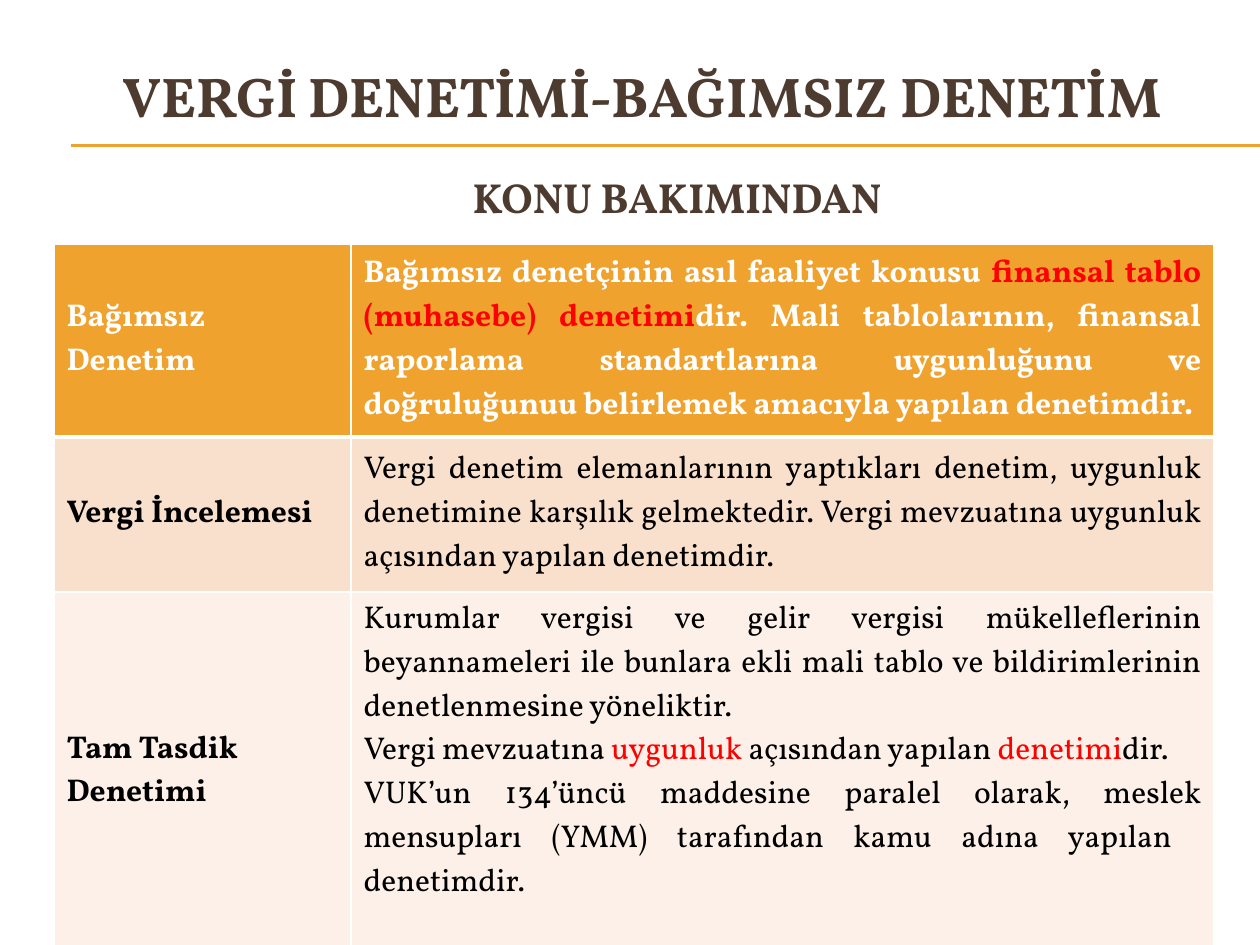
from lxml.etree import SubElement
from pptx import Presentation
from pptx.dml.color import RGBColor
from pptx.enum.shapes import MSO_CONNECTOR
from pptx.enum.text import MSO_ANCHOR as Anchor, PP_ALIGN as Align
from pptx.oxml.ns import qn
from pptx.util import Emu, Pt

FONT = "Vollkorn"
BROWN, ORANGE, RED = "4E3B30", "F0A22E", "FF0000"
WHITE, BLACK = "FFFFFF", "000000"

COLUMN_WIDTHS = [297, 863]
ROW_HEIGHTS = [193, 155, 360]
# Each row: fill, text colour, label, then paragraphs of (text, is highlighted)
ROWS = [
    (ORANGE, WHITE, "Bağımsız Denetim", [
        [("Bağımsız denetçinin asıl faaliyet konusu ", False),
         ("finansal tablo (muhasebe) denetimi", True),
         ("dir. Mali tablolarının, finansal raporlama standartlarına uygunluğunu "
          "ve doğruluğunuu belirlemek amacıyla yapılan denetimdir. ", False)],
    ]),
    ("F9E0CD", BLACK, "Vergi İncelemesi", [
        [("Vergi denetim elemanlarının yaptıkları denetim, uygunluk denetimine "
          "karşılık gelmektedir. Vergi mevzuatına uygunluk açısından yapılan "
          "denetimdir.", False)],
    ]),
    ("FCF0E8", BLACK, "Tam Tasdik Denetimi", [
        [("Kurumlar vergisi ve gelir vergisi mükelleflerinin beyannameleri ile "
          "bunlara ekli mali tablo ve bildirimlerinin denetlenmesine "
          "yöneliktir. ", False)],
        [("Vergi mevzuatına ", False), ("uygunluk", True),
         (" açısından yapılan ", False), ("denetimi", True), ("dir.", False)],
        [("VUK’un 134’üncü maddesine paralel olarak, meslek mensupları (YMM) "
          "tarafından kamu adına yapılan  denetimdir.", False)],
    ]),
]


def px(length):
    return Emu(length * 914400 // 126)


def color(value):
    return RGBColor.from_string(value)


def style(font, size, value, bold):
    font.name, font.size, font.bold = FONT, Pt(size), bold
    font.color.rgb = color(value)


def add_heading(slide, box, text, size, anchor, indent=0):
    frame = slide.shapes.add_textbox(*map(px, box)).text_frame
    frame.word_wrap = True
    frame.vertical_anchor = anchor
    paragraph = frame.paragraphs[0]
    paragraph.text = text
    paragraph.alignment = Align.CENTER
    style(paragraph.font, size, BROWN, True)
    if indent:
        paragraph._p.get_or_add_pPr().set("indent", str(px(indent)))


def add_rules(slide, box):
    left, top, width, height = box
    for y in (top, top + height):
        line = slide.shapes.add_connector(
            MSO_CONNECTOR.STRAIGHT, px(left), px(y), px(left + width), px(y))
        line.line.color.rgb = color(ORANGE)
        line.line.width = Pt(0.75)
        SubElement(line._element.spPr, qn("a:effectLst"))


def set_borders(cell, widths):
    properties = cell._tc.get_or_add_tcPr()
    for index, (side, width) in enumerate(widths.items()):
        border = properties.makeelement(qn(f"a:ln{side}"), {"w": str(Pt(width))})
        fill = SubElement(border, qn("a:solidFill"))
        SubElement(fill, qn("a:srgbClr"), val=WHITE)
        properties.insert(index, border)


def fill_cell(cell, paragraphs, value, bold, alignment):
    frame = cell.text_frame
    for index, runs in enumerate(paragraphs):
        paragraph = frame.add_paragraph() if index else frame.paragraphs[0]
        paragraph.alignment = alignment
        style(paragraph.font, 18, value, bold)
        for text, highlighted in runs:
            run = paragraph.add_run()
            run.text = text
            style(run.font, 18, RED if highlighted else value, bold)


def add_comparison_table(slide, box):
    table = slide.shapes.add_table(
        len(ROWS), len(COLUMN_WIDTHS), *map(px, box)).table
    for column, width in zip(table.columns, COLUMN_WIDTHS):
        column.width = px(width)
    for index, (fill, value, label, paragraphs) in enumerate(ROWS):
        table.rows[index].height = px(ROW_HEIGHTS[index])
        label_cell, detail_cell = table.rows[index].cells
        fill_cell(label_cell, [[(label, False)]], value, True, Align.LEFT)
        fill_cell(detail_cell, paragraphs, value, index == 0, Align.JUSTIFY)
        label_cell.vertical_anchor = Anchor.MIDDLE
        # The last row is taller than its text, which starts at the top
        last = index == len(ROWS) - 1
        detail_cell.vertical_anchor = Anchor.TOP if last else Anchor.MIDDLE
        for cell in (label_cell, detail_cell):
            cell.fill.solid()
            cell.fill.fore_color.rgb = color(fill)
            set_borders(cell, {"L": 1, "R": 1, "T": 3 if index == 1 else 1,
                               "B": 3 if index == 0 else 1})


def main():
    presentation = Presentation()
    presentation.slide_width, presentation.slide_height = px(1260), px(945)
    slide = presentation.slides.add_slide(presentation.slide_layouts[6])

    # Title and double rule
    add_rules(slide, (71, 145, 1189, 1))
    add_heading(slide, (44, 37, 1197, 116), "VERGİ DENETİMİ-BAĞIMSIZ DENETİM",
                32, Anchor.MIDDLE)
    # Subtitle
    add_heading(slide, (42, 165, 1197, 673), "KONU BAKIMINDAN",
                24, Anchor.TOP, indent=73)
    # Table
    add_comparison_table(
        slide, (54, 244, sum(COLUMN_WIDTHS), sum(ROW_HEIGHTS)))
    presentation.save("out.pptx")


if __name__ == "__main__":
    main()
